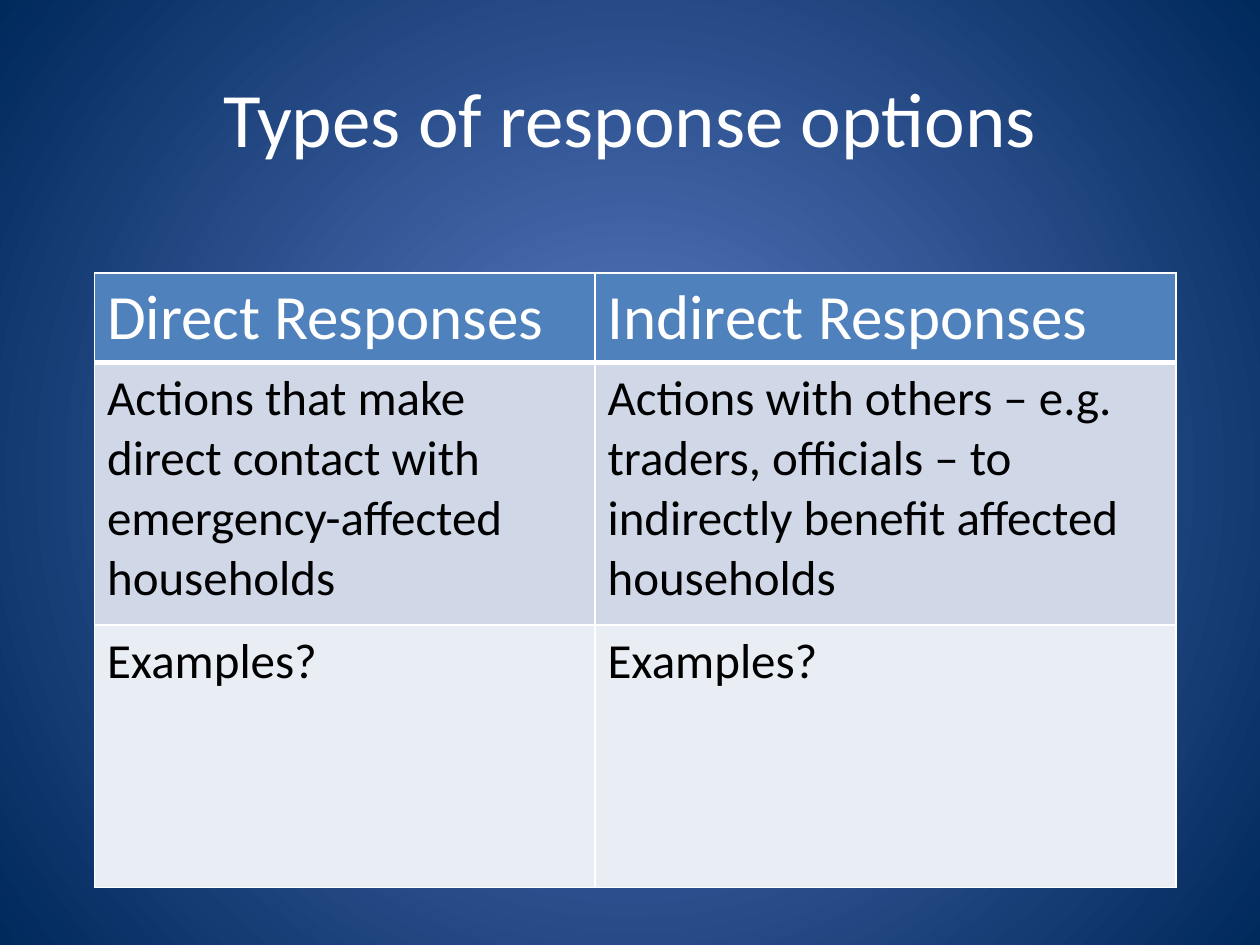
from dataclasses import dataclass

from lxml import etree
from pptx import Presentation
from pptx.dml.color import RGBColor
from pptx.enum.text import MSO_ANCHOR, PP_ALIGN
from pptx.oxml.ns import qn
from pptx.util import Pt

CENTER = PP_ALIGN.CENTER
MIDDLE = MSO_ANCHOR.MIDDLE
TITLE_ONLY = 5


@dataclass(frozen=True)
class Theme:
    font: str = "Calibri"
    white: str = "FFFFFF"
    black: str = "000000"
    glow: str = "5E7CC5"
    navy: str = "00295C"
    header_fill: str = "4F81BD"
    dark_band: str = "D0D8E8"
    light_band: str = "E9EDF4"
    title_size: int = 44
    header_size: int = 36
    body_size: int = 28


@dataclass(frozen=True)
class ResponseRow:
    texts: tuple[str, str]
    height: float
    fill: str
    color: str
    size: int
    rule_below: float = 1


THEME = Theme()
COLUMN_WIDTHS = (286, 332)
ROWS = (
    ResponseRow(("Direct Responses", "Indirect Responses"),
                42.5, THEME.header_fill, THEME.white, THEME.header_size, 3),
    ResponseRow(("Actions that make direct contact with emergency-affected households",
                 "Actions with others – e.g. traders, officials – to indirectly "
                 "benefit affected households"),
                150, THEME.dark_band, THEME.black, THEME.body_size),
    ResponseRow(("Examples?", "Examples?"),
                150, THEME.light_band, THEME.black, THEME.body_size),
)


def style_font(paragraph, size: int, color: str) -> None:
    font = paragraph.font
    font.name = THEME.font
    font.size = Pt(size)
    font.bold = False
    font.color.rgb = RGBColor.from_string(color)


def paint_background(slide) -> None:
    """Radial gradient, light in the centre."""
    fill = slide.background.fill
    fill.gradient()
    for stop, color in zip(fill.gradient_stops, (THEME.glow, THEME.navy)):
        stop.color.rgb = RGBColor.from_string(color)
    gradient = slide.element.find(".//" + qn("a:gradFill"))
    gradient.remove(gradient.find(qn("a:lin")))
    circle = etree.SubElement(gradient, qn("a:path"), {"path": "circle"})
    etree.SubElement(circle, qn("a:fillToRect"), dict.fromkeys("ltrb", "50000"))


def add_borders(cell, rule_below: float) -> None:
    properties = cell._tc.get_or_add_tcPr()
    widths = {"a:lnL": 1, "a:lnR": 1, "a:lnT": 1, "a:lnB": rule_below}
    for position, (side, width) in enumerate(widths.items()):
        line = etree.Element(qn(side), {"w": str(Pt(width))})
        solid = etree.SubElement(line, qn("a:solidFill"))
        etree.SubElement(solid, qn("a:srgbClr"), {"val": THEME.white})
        properties.insert(position, line)


def fill_cell(cell, text: str, row: ResponseRow) -> None:
    cell.text = text
    style_font(cell.text_frame.paragraphs[0], row.size, row.color)
    cell.fill.solid()
    cell.fill.fore_color.rgb = RGBColor.from_string(row.fill)
    add_borders(cell, row.rule_below)


def add_title(slide, text: str) -> None:
    title = slide.shapes.title
    title.left, title.top, title.width, title.height = Pt(36), Pt(21.6), Pt(648), Pt(90)
    title.text = text
    title.text_frame.vertical_anchor = MIDDLE
    heading = title.text_frame.paragraphs[0]
    heading.alignment = CENTER
    style_font(heading, THEME.title_size, THEME.white)


def add_responses(slide) -> None:
    responses = slide.shapes.add_table(
        len(ROWS), len(COLUMN_WIDTHS), Pt(54), Pt(156),
        Pt(sum(COLUMN_WIDTHS)), Pt(sum(row.height for row in ROWS))).table
    for column, width in zip(responses.columns, COLUMN_WIDTHS):
        column.width = Pt(width)
    for table_row, row in zip(responses.rows, ROWS):
        table_row.height = Pt(row.height)
        for cell, text in zip(table_row.cells, row.texts):
            fill_cell(cell, text, row)


def main() -> None:
    presentation = Presentation()
    presentation.slide_width, presentation.slide_height = Pt(720), Pt(540)
    slide = presentation.slides.add_slide(presentation.slide_layouts[TITLE_ONLY])
    paint_background(slide)
    add_title(slide, "Types of response options")
    # Comparison of the two response types
    add_responses(slide)
    presentation.save("out.pptx")


if __name__ == "__main__":
    main()
